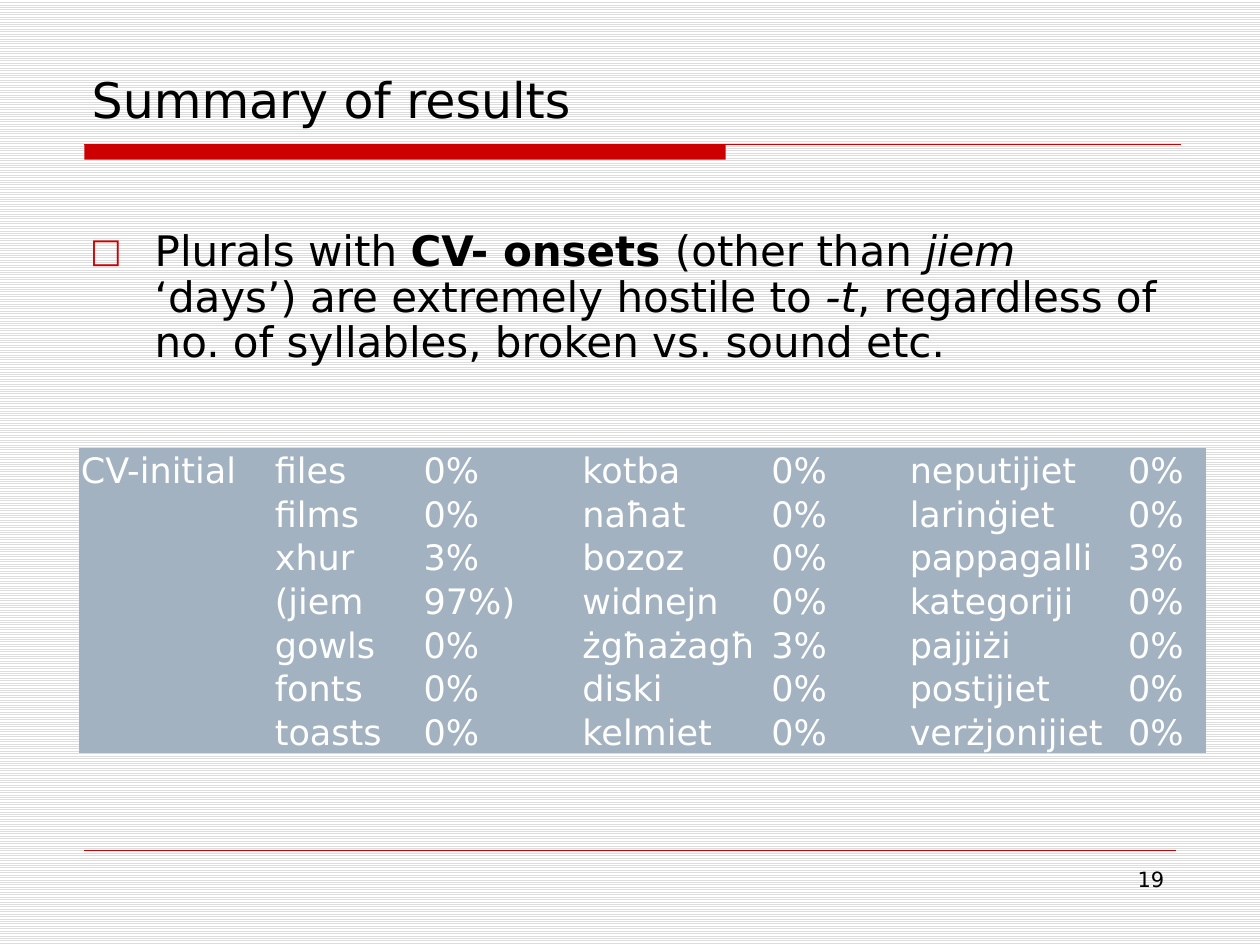
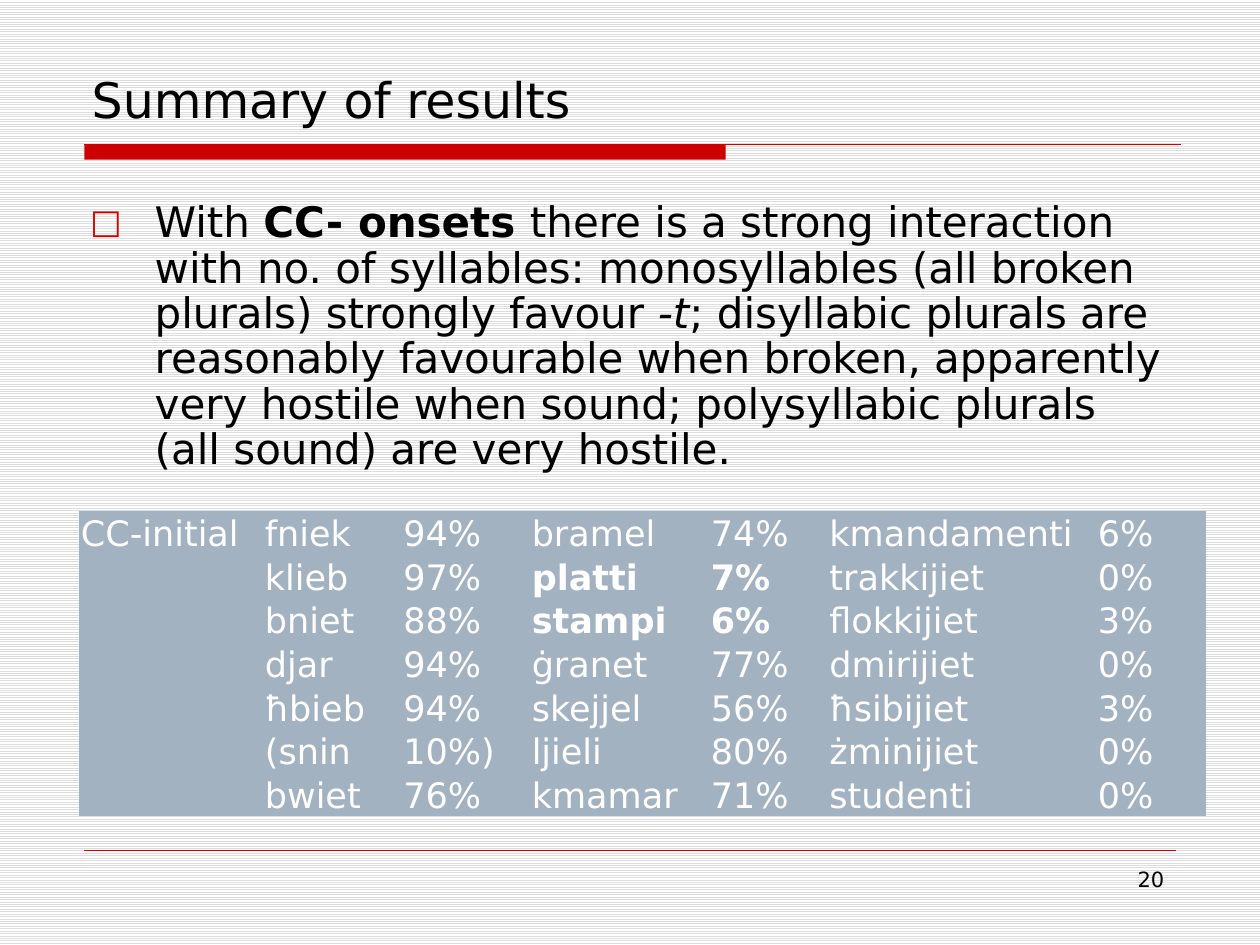
from dataclasses import dataclass

from lxml import etree
from pptx import Presentation
from pptx import util as u
from pptx.dml.color import RGBColor
from pptx.enum import dml, shapes, text
from pptx.oxml import ns
from pptx.slide import Slide

RED = RGBColor(0xCC, 0x00, 0x00)
BLACK = RGBColor(0x00, 0x00, 0x00)
WHITE = RGBColor(0xFF, 0xFF, 0xFF)
STRIPE = RGBColor(0xDD, 0xDD, 0xDD)
SLATE = RGBColor(0xA3, 0xB2, 0xC1)

FONT = "DejaVu Sans"
NO_TABLE_STYLE = "{2D5ABB26-0587-4C30-8999-92F81FD0307C}"
TITLE = "Summary of results"
CONTENT_LEFT = 1.6
RULE_LEFT = 1.7
RULE_TOP = 2.92
ROW_HEIGHT = 0.85
CELL_INSET = 0.03
BULLET_INDENT = 1.3

TITLE_FORMAT = {"size": u.Pt(28), "name": FONT}
BODY_FORMAT = {"size": u.Pt(24), "name": FONT}
CELL_FORMAT = {"size": u.Pt(20), "name": FONT}
NUMBER_FORMAT = {"size": u.Pt(12), "name": FONT}
BOLD = {"bold": True}
ITALIC = {"italic": True}
PLAIN = {}


@dataclass(frozen=True)
class Box:
    left: float
    top: float
    width: float
    height: float

    def lengths(self) -> list[u.Cm]:
        return [u.Cm(value) for value in (self.left, self.top, self.width, self.height)]


@dataclass(frozen=True)
class Span:
    words: str
    emphasis: dict


@dataclass(frozen=True)
class ResultTable:
    top: float
    heading: str
    column_widths: list[float]
    rows: list[str]
    bold_words: tuple[str, ...] = ()


@dataclass(frozen=True)
class ResultSlide:
    number: int
    body_top: float
    finding: list[Span]
    table: ResultTable


RESULTS = [
    ResultSlide(
        19,
        4.52,
        [
            Span("Plurals with ", PLAIN),
            Span("CV- onsets ", BOLD),
            Span("(other than ", PLAIN),
            Span("jiem ", ITALIC),
            Span("‘days’) are extremely hostile to ", PLAIN),
            Span("-t", ITALIC),
            Span(", regardless of no. of syllables, broken vs. sound etc.", PLAIN),
        ],
        ResultTable(
            9.04,
            "CV-initial",
            [3.91, 3.0, 3.2, 3.81, 2.79, 4.4, 1.6],
            [
                "files 0% kotba 0% neputijiet 0%",
                "films 0% naħat 0% larinġiet 0%",
                "xhur 3% bozoz 0% pappagalli 3%",
                "(jiem 97%) widnejn 0% kategoriji 0%",
                "gowls 0% żgħażagħ 3% pajjiżi 0%",
                "fonts 0% diski 0% postijiet 0%",
                "toasts 0% kelmiet 0% verżjonijiet 0%",
            ],
        ),
    ),
    ResultSlide(
        20,
        3.94,
        [
            Span("With ", PLAIN),
            Span("CC- onsets ", BOLD),
            Span(
                "there is a strong interaction with no. of syllables: "
                "monosyllables (all broken plurals) strongly favour ",
                PLAIN,
            ),
            Span("-t", ITALIC),
            Span(
                "; disyllabic plurals are reasonably favourable when broken, "
                "apparently very hostile when sound; polysyllabic plurals "
                "(all sound) are very hostile.",
                PLAIN,
            ),
        ],
        ResultTable(
            10.31,
            "CC-initial",
            [3.71, 2.79, 2.59, 3.61, 2.39, 5.41, 2.21],
            [
                "fniek 94% bramel 74% kmandamenti 6%",
                "klieb 97% platti 7% trakkijiet 0%",
                "bniet 88% stampi 6% flokkijiet 3%",
                "djar 94% ġranet 77% dmirijiet 0%",
                "ħbieb 94% skejjel 56% ħsibijiet 3%",
                "(snin 10%) ljieli 80% żminijiet 0%",
                "bwiet 76% kmamar 71% studenti 0%",
            ],
            ("platti", "7%", "stampi", "6%"),
        ),
    ),
]
BOLD_COLUMNS = (3, 4)


def apply(target: object, values: dict) -> None:
    for name, value in values.items():
        setattr(target, name, value)


def add_span(paragraph, words: str, values: dict, color: RGBColor = BLACK) -> None:
    run = paragraph.add_run()
    run.text = words
    apply(run.font, values)
    run.font.color.rgb = color


def add_text(slide: Slide, box: Box, spans: list[Span], values: dict, frame_values: dict):
    frame = slide.shapes.add_textbox(*box.lengths()).text_frame
    apply(frame, {"word_wrap": True} | frame_values)
    paragraph = frame.paragraphs[0]
    for span in spans:
        add_span(paragraph, span.words, values | span.emphasis)
    return paragraph


def add_rule(slide: Slide, right: float, top: float, weight: float) -> None:
    rule = slide.shapes.add_connector(
        shapes.MSO_CONNECTOR.STRAIGHT, u.Cm(RULE_LEFT), u.Cm(top), u.Cm(right), u.Cm(top)
    )
    rule.line.color.rgb = RED
    rule.line.width = u.Pt(weight)
    etree.SubElement(rule._element.spPr, ns.qn("a:effectLst"))


def add_frame(slide: Slide, number: int) -> None:
    background = slide.background.fill
    background.patterned()
    background.pattern = dml.MSO_PATTERN.LIGHT_HORIZONTAL
    background.fore_color.rgb = STRIPE
    background.back_color.rgb = WHITE

    band = slide.shapes.add_shape(
        shapes.MSO_SHAPE.RECTANGLE, *Box(RULE_LEFT, RULE_TOP, 12.93, 0.3).lengths()
    )
    band.shadow.inherit = False
    band.fill.solid()
    band.fill.fore_color.rgb = RED
    band.line.fill.background()
    add_rule(slide, 23.8, RULE_TOP, 0.75)
    add_rule(slide, 23.7, 17.15, 0.25)

    page = add_text(
        slide, Box(18.21, 17.35, 5.51, 1.32), [Span(str(number), PLAIN)], NUMBER_FORMAT, {}
    )
    page.alignment = text.PP_ALIGN.RIGHT
    add_text(
        slide,
        Box(CONTENT_LEFT, 0.84, 22.22, 1.88),
        [Span(TITLE, PLAIN)],
        TITLE_FORMAT,
        {"vertical_anchor": text.MSO_ANCHOR.BOTTOM},
    )


def add_finding(slide: Slide, result: ResultSlide) -> None:
    paragraph = add_text(
        slide, Box(1.57, result.body_top, 22.22, 2.21), result.finding, BODY_FORMAT, {}
    )
    paragraph.line_spacing = 0.9
    properties = paragraph._p.get_or_add_pPr()
    properties.set("marL", str(u.Cm(BULLET_INDENT)))
    properties.set("indent", str(-u.Cm(BULLET_INDENT)))
    before = etree.SubElement(properties, ns.qn("a:spcBef"))
    etree.SubElement(before, ns.qn("a:spcPct"), val="20000")
    paragraph.space_after = u.Pt(6)
    bullet_color = etree.SubElement(properties, ns.qn("a:buClr"))
    etree.SubElement(bullet_color, ns.qn("a:srgbClr"), val=str(RED))
    etree.SubElement(properties, ns.qn("a:buSzPct"), val="80000")
    etree.SubElement(properties, ns.qn("a:buFont"), typeface=FONT)
    etree.SubElement(properties, ns.qn("a:buChar"), char="□")


def add_results(slide: Slide, results: ResultTable) -> None:
    widths = results.column_widths
    box = Box(CONTENT_LEFT, results.top, sum(widths), ROW_HEIGHT * len(results.rows))
    table = slide.shapes.add_table(len(results.rows), len(widths), *box.lengths()).table
    apply(table, {"first_row": False, "horz_banding": False})
    table._tbl.tblPr.find(ns.qn("a:tableStyleId")).text = NO_TABLE_STYLE
    for column, width in zip(table.columns, widths):
        column.width = u.Cm(width)

    cell_values = {
        "margin_left": u.Cm(CELL_INSET),
        "margin_right": u.Cm(CELL_INSET),
        "margin_top": u.Cm(CELL_INSET),
        "margin_bottom": 0,
        "vertical_anchor": text.MSO_ANCHOR.BOTTOM,
    }
    for row_index, row in enumerate(results.rows):
        heading = results.heading if row_index == 0 else ""
        for column_index, words in enumerate([heading, *row.split()]):
            cell = table.cell(row_index, column_index)
            apply(cell, cell_values)
            cell.fill.solid()
            cell.fill.fore_color.rgb = SLATE
            if words:
                bold = column_index in BOLD_COLUMNS and words in results.bold_words
                values = CELL_FORMAT | {"bold": bold}
                add_span(cell.text_frame.paragraphs[0], words, values, WHITE)


def main() -> None:
    presentation = Presentation()
    presentation.slide_width = u.Cm(25.4)
    presentation.slide_height = u.Cm(19.05)
    for result in RESULTS:
        slide = presentation.slides.add_slide(presentation.slide_layouts[6])
        add_frame(slide, result.number)
        add_finding(slide, result)
        add_results(slide, result.table)
    presentation.save("out.pptx")


if __name__ == "__main__":
    main()
